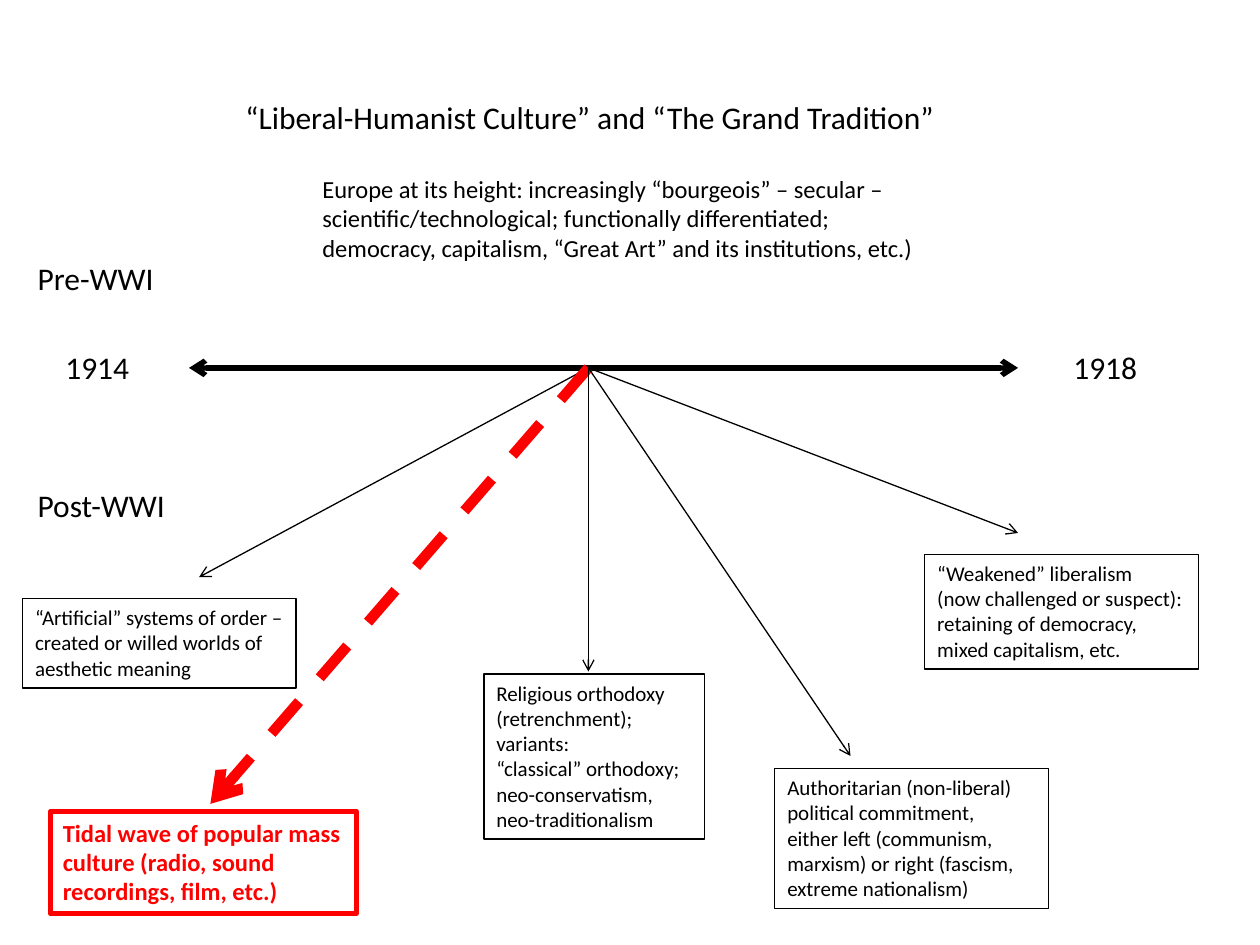
from dataclasses import dataclass

from lxml import etree
from pptx import Presentation
from pptx.dml.color import RGBColor
from pptx.enum.dml import MSO_LINE
from pptx.enum.shapes import MSO_CONNECTOR, MSO_SHAPE
from pptx.enum.text import MSO_ANCHOR, MSO_AUTO_SIZE, PP_ALIGN
from pptx.oxml.ns import qn
from pptx.slide import Slide
from pptx.text.text import TextFrame
from pptx.util import Inches, Pt

STRAIGHT = MSO_CONNECTOR.STRAIGHT
RECTANGLE = MSO_SHAPE.RECTANGLE
DASH = MSO_LINE.DASH
TOP = MSO_ANCHOR.TOP
LEFT = PP_ALIGN.LEFT
FIT_TEXT = MSO_AUTO_SIZE.SHAPE_TO_FIT_TEXT

COLUMNS, ROWS = 100, 75
SLIDE_WIDTH, SLIDE_HEIGHT = Inches(10), Inches(7.5)


@dataclass(frozen=True)
class Theme:
    font: str = "Calibri"
    ink: RGBColor = RGBColor(0x00, 0x00, 0x00)
    alert: RGBColor = RGBColor(0xFF, 0x00, 0x00)
    heading: int = 18
    body: int = 14
    note: int = 12
    thin: float = 0.75
    thick: float = 3
    heavy: float = 6


THEME = Theme()


@dataclass(frozen=True)
class Label:
    column: float
    row: float
    columns: float
    rows: float
    lines: tuple[str, ...]
    size: int = THEME.heading


@dataclass(frozen=True)
class Outcome:
    column: float
    row: float
    columns: float
    rows: float
    lines: tuple[str, ...]
    arrow_column: float
    arrow_row: float
    highlighted: bool = False


AXIS_ROW = 29.2
AXIS_START, AXIS_CENTRE, AXIS_END = 15, 46.7, 80.8

LABELS = (
    Label(18.5, 7.3, 61.4, 4, ("“Liberal-Humanist Culture” and “The Grand Tradition”",)),
    Label(24.6, 13.3, 49.2, 8.1, (
        "Europe at its height: increasingly “bourgeois” – secular – "
        "scientific/technological; functionally differentiated;",
        "democracy, capitalism, “Great Art” and its institutions, etc.)",
    ), THEME.body),
    Label(2, 20.1, 16.7, 4, ("Pre-WWI",)),
    Label(2, 38.1, 16.7, 4, ("Post-WWI",)),
    Label(4.2, 27.1, 7.5, 4, ("1914",)),
    Label(84.2, 27.1, 7.5, 4, ("1918",)),
)

OUTCOMES = (
    Outcome(1.8, 47.5, 21.7, 7.1, (
        "“Artificial” systems of order – created or willed worlds of aesthetic meaning",
    ), 15.8, 45.8),
    Outcome(4, 64.4, 24.3, 8.1, (
        "Tidal wave of popular mass culture (radio, sound recordings, film, etc.)",
    ), 16.7, 63.8, highlighted=True),
    Outcome(38.4, 53.5, 17.5, 13.1, (
        "Religious orthodoxy (retrenchment);",
        "variants:",
        "“classical” orthodoxy;",
        "neo-conservatism, neo-traditionalism",
    ), AXIS_CENTRE, 53.3),
    Outcome(61.5, 61, 21.7, 11.1, (
        "Authoritarian (non-liberal)",
        "political commitment,",
        "either left (communism, marxism) or right (fascism, extreme nationalism)",
    ), 67.5, 60),
    Outcome(73.4, 44, 21.7, 9.1, (
        "“Weakened” liberalism",
        "(now challenged or suspect): retaining of democracy, mixed capitalism, etc.",
    ), 80.8, 42.3),
)


def across(columns: float) -> int:
    return round(SLIDE_WIDTH * columns / COLUMNS)


def down(rows: float) -> int:
    return round(SLIDE_HEIGHT * rows / ROWS)


def frame_of(item: Label | Outcome) -> tuple[int, int, int, int]:
    return across(item.column), down(item.row), across(item.columns), down(item.rows)


def write(frame: TextFrame, lines: tuple[str, ...], size: int,
          color: RGBColor = THEME.ink, bold: bool = False) -> None:
    frame.word_wrap = True
    frame.auto_size = FIT_TEXT
    frame.vertical_anchor = TOP
    for index, line in enumerate(lines):
        para = frame.paragraphs[0] if index == 0 else frame.add_paragraph()
        para.text = line
        para.alignment = LEFT
        para.font.name = THEME.font
        para.font.size = Pt(size)
        para.font.bold = bold
        para.font.color.rgb = color


def add_label(page: Slide, label: Label) -> None:
    box = page.shapes.add_textbox(*frame_of(label))
    write(box.text_frame, label.lines, label.size)


def add_arrow(page: Slide, start: tuple[float, float], end: tuple[float, float],
              color: RGBColor, width: float, dashed: bool = False,
              double: bool = False) -> None:
    arrow = page.shapes.add_connector(
        STRAIGHT, across(start[0]), down(start[1]), across(end[0]), down(end[1]))
    arrow.line.color.rgb = color
    arrow.line.width = Pt(width)
    if dashed:
        arrow.line.dash_style = DASH
    outline = arrow.line._get_or_add_ln()
    for tag in ("a:headEnd", "a:tailEnd") if double else ("a:tailEnd",):
        etree.SubElement(outline, qn(tag), type="arrow")
    etree.SubElement(arrow._element.spPr, qn("a:effectLst"))


def add_outcome_arrow(page: Slide, outcome: Outcome) -> None:
    hot = outcome.highlighted
    add_arrow(page, (AXIS_CENTRE, AXIS_ROW), (outcome.arrow_column, outcome.arrow_row),
              THEME.alert if hot else THEME.ink,
              THEME.heavy if hot else THEME.thin, dashed=hot)


def add_outcome_box(page: Slide, outcome: Outcome) -> None:
    hot = outcome.highlighted
    color = THEME.alert if hot else THEME.ink
    box = page.shapes.add_shape(RECTANGLE, *frame_of(outcome))
    box.shadow.inherit = False
    box.fill.background()
    box.line.color.rgb = color
    box.line.width = Pt(THEME.thick if hot else THEME.thin)
    write(box.text_frame, outcome.lines, THEME.body if hot else THEME.note, color, hot)


def main() -> None:
    deck = Presentation()
    deck.slide_width, deck.slide_height = SLIDE_WIDTH, SLIDE_HEIGHT
    page = deck.slides.add_slide(deck.slide_layouts[6])
    add_arrow(page, (AXIS_START, AXIS_ROW), (AXIS_END, AXIS_ROW),
              THEME.ink, THEME.thick, double=True)
    for label in LABELS:
        add_label(page, label)
    for outcome in OUTCOMES:
        add_outcome_arrow(page, outcome)
    for outcome in OUTCOMES:
        add_outcome_box(page, outcome)
    deck.save("out.pptx")


if __name__ == "__main__":
    main()
